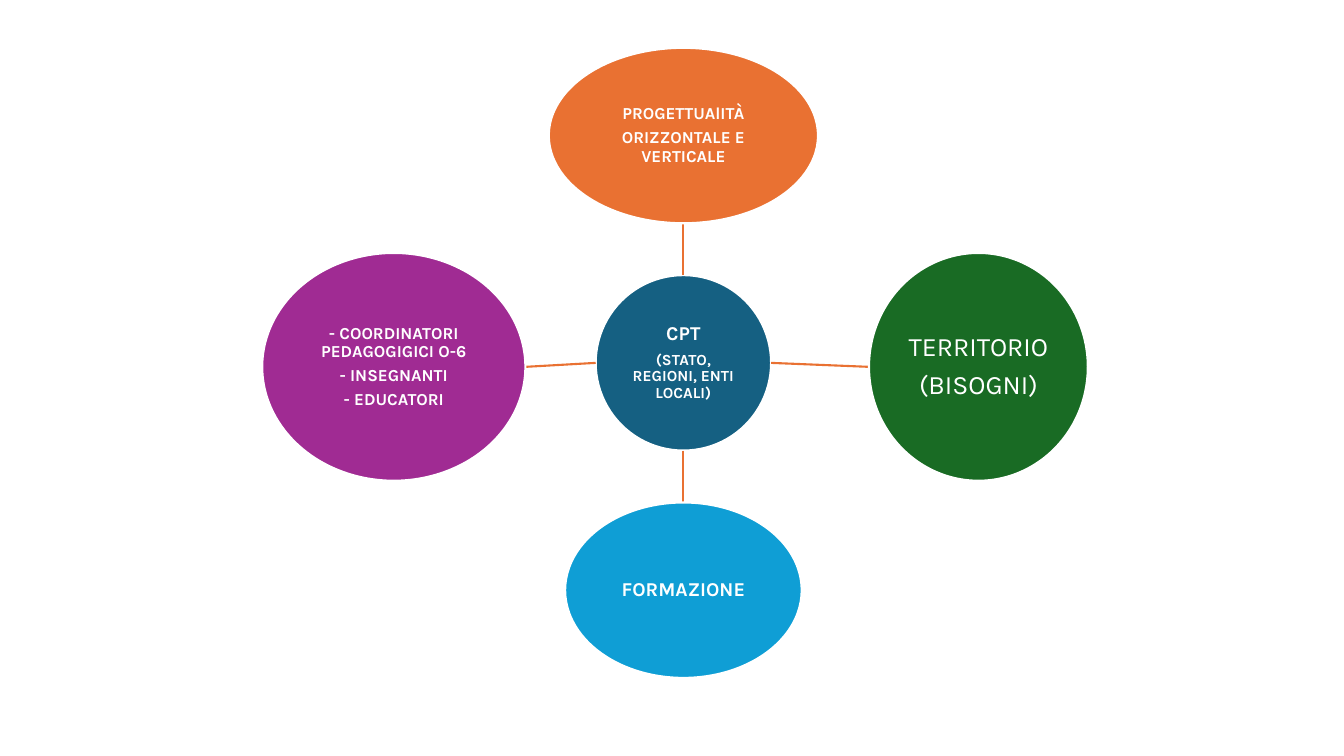
from dataclasses import dataclass

from lxml import etree
from pptx import Presentation
from pptx import util as u
from pptx.dml.color import RGBColor
from pptx.enum import shapes, text
from pptx.oxml import ns
from pptx.shapes.autoshape import Shape
from pptx.slide import Slide

WIDE, HIGH = u.Inches(13.33), u.Inches(7.5)
WHITE = RGBColor(0xFF, 0xFF, 0xFF)
NAVY = RGBColor(0x15, 0x60, 0x82)
ORANGE = RGBColor(0xE9, 0x71, 0x32)
GREEN = RGBColor(0x19, 0x6B, 0x24)
BLUE = RGBColor(0x0F, 0x9E, 0xD5)
PURPLE = RGBColor(0xA0, 0x2B, 0x93)
TOP, LEFT, BOTTOM, RIGHT = (0, -1), (-1, 0), (0, 1), (1, 0)
MID_X, MID_Y, REACH, TALL = 50.85, 48, 30.07, 23.2


@dataclass(frozen=True)
class Node:
    """An oval, with its centre and size in percent of the slide."""
    x: float
    y: float
    wide: float
    high: float
    fill: RGBColor
    lines: tuple[tuple[str, int], ...]
    bold: bool = True
    side: tuple[int, int] = TOP


HUB = Node(MID_X, MID_Y, 13.05, TALL, NAVY,
           (("CPT", 14), ("(STATO, REGIONI, ENTI LOCALI)", 11)))
NODES = (
    Node(MID_X, MID_Y - REACH, 20.03, TALL, ORANGE,
         (("PROGETTUAlITÀ", 12), ("ORIZZONTALE E VERTICALE", 12)), side=TOP),
    Node(72.8, 48.53, 16.28, 30.13, GREEN,
         (("TERRITORIO", 19), ("(BISOGNI)", 19)), bold=False, side=RIGHT),
    Node(MID_X, MID_Y + REACH, 17.6, TALL, BLUE,
         (("FORMAZIONE", 14),), side=BOTTOM),
    Node(29.3, 48.53, 19.58, 30.13, PURPLE,
         (("- COORDINATORI PEDAGOGIGICI O-6", 12), ("- INSEGNANTI", 12),
          ("- EDUCATORI", 12)), side=LEFT),
)


def write(oval: Shape, lines: tuple[tuple[str, int], ...], *, bold: bool = True,
          font: str = "Karla", ink: RGBColor = WHITE) -> None:
    """Write centred lines of text, each with its own size, in an oval."""
    frame = oval.text_frame
    frame.word_wrap = True
    frame.vertical_anchor = text.MSO_ANCHOR.MIDDLE
    frame.margin_left = frame.margin_right = u.Inches(0.01)
    frame.margin_top = frame.margin_bottom = u.Inches(0.01)
    for i, (words, size) in enumerate(lines):
        para = frame.add_paragraph() if i else frame.paragraphs[0]
        para.alignment = text.PP_ALIGN.CENTER
        para.line_spacing = 0.9
        para.space_after = u.Pt(0.35 * size)
        run = para.add_run()
        run.text = words
        run.font.name, run.font.size, run.font.bold = font, u.Pt(size), bold
        run.font.color.rgb = ink


def draw(slide: Slide, node: Node) -> None:
    """Draw a node as a filled oval with its text."""
    wide, high = WIDE * node.wide / 100, HIGH * node.high / 100
    left = WIDE * node.x / 100 - wide / 2
    top = HIGH * node.y / 100 - high / 2
    oval = slide.shapes.add_shape(shapes.MSO_SHAPE.OVAL, *map(int, (left, top, wide, high)))
    oval.shadow.inherit = False
    oval.fill.solid()
    oval.fill.fore_color.rgb = node.fill
    oval.line.color.rgb = WHITE
    oval.line.width = u.Pt(1.5)
    write(oval, node.lines, bold=node.bold)


def edge(node: Node, across: int, down: int) -> tuple[int, int]:
    """Return the point where a node ends in a direction."""
    return (int(WIDE * (node.x + across * node.wide / 2) / 100),
            int(HIGH * (node.y + down * node.high / 2) / 100))


def link(slide: Slide, node: Node) -> None:
    """Join the hub to the facing side of a node."""
    across, down = node.side
    spoke = slide.shapes.add_connector(
        shapes.MSO_CONNECTOR.STRAIGHT, *edge(HUB, across, down), *edge(node, -across, -down))
    spoke.line.color.rgb = ORANGE
    spoke.line.width = u.Pt(1.5)
    etree.SubElement(spoke._element.spPr, ns.qn("a:effectLst"))


def main() -> None:
    """Build the slide and save it."""
    deck = Presentation()
    deck.slide_width, deck.slide_height = WIDE, HIGH
    slide = deck.slides.add_slide(deck.slide_layouts[6])
    draw(slide, HUB)
    for node in NODES:
        link(slide, node)
        draw(slide, node)
    deck.save("out.pptx")


if __name__ == "__main__":
    main()
